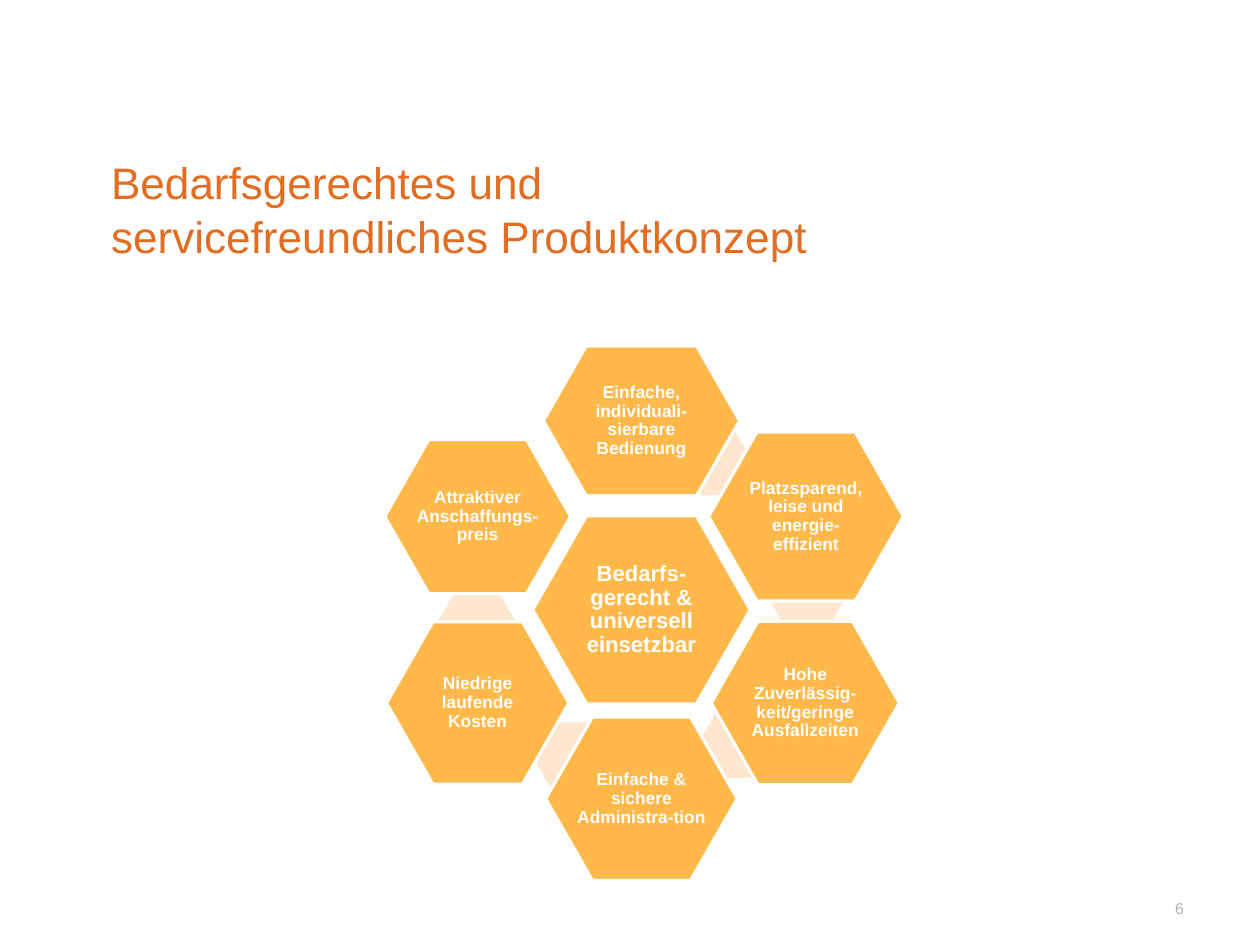
import pptx
import pptx.util
import pptx.dml.color
import pptx.enum.shapes
import pptx.enum.text

Pt = pptx.util.Pt
ALIGN = pptx.enum.text.PP_ALIGN
ANCHOR = pptx.enum.text.MSO_ANCHOR

COLORS = {"title": "E16D22", "number": "B2B2B2", "tile": "FFB84A",
          "link": "FFE6D0", "white": "FFFFFF"}

TITLE = "Bedarfsgerechtes und servicefreundliches Produktkonzept"
NUMBER = "6"
CENTER = (407.3, 387.2)
HUB = ("Bedarfs-gerecht & universell einsetzbar", (138.2, 119.5))
PETALS = [
    ("Einfache, individuali-sierbare Bedienung", (0, -120), (124.6, 95)),
    ("Platzsparend, leise und energie-effizient", (104.5, -59.2), (123.8, 107.3)),
    ("Hohe Zuverlässig-keit/geringe Ausfallzeiten", (104, 59.2), (119.5, 103.7)),
    ("Einfache & sichere Administra-tion", (0, 120), (121.7, 103.7)),
    ("Niedrige laufende Kosten", (-104, 59.2), (115.9, 103)),
    ("Attraktiver Anschaffungs-preis", (-104, -59.2), (118.1, 97.9)),
]
LINKS = [(424.8, 270), (486, 354.2), (443.5, 449.3), (338.4, 458.6), (276.5, 375.1)]
LINK_SIZE = (52.6, 44.6)

prs = pptx.Presentation()
prs.slide_width, prs.slide_height = Pt(800), Pt(600)
s = prs.slides.add_slide(prs.slide_layouts[6])


def rgb(name):
    return pptx.dml.color.RGBColor.from_string(COLORS[name])


def apply(obj, **values):
    for key, value in values.items():
        setattr(obj, key, value)


def write(sp, text, size, color, margins, anchor, align, spacing, bold=False):
    tf = sp.text_frame
    left, top, right, bottom = map(Pt, margins)
    apply(tf, word_wrap=True, vertical_anchor=anchor, margin_left=left,
          margin_top=top, margin_right=right, margin_bottom=bottom)
    p = tf.paragraphs[0]
    apply(p, alignment=align, line_spacing=spacing)
    r = p.add_run()
    r.text = text
    apply(r.font, name="Arial", size=Pt(size), bold=bold)
    r.font.color.rgb = rgb(color)


def hexagon(left, top, width, height, fill, adj):
    sp = s.shapes.add_shape(pptx.enum.shapes.MSO_SHAPE.HEXAGON,
                            Pt(left), Pt(top), Pt(width), Pt(height))
    sp.shadow.inherit = False
    sp.adjustments[0] = adj
    sp.fill.solid()
    sp.fill.fore_color.rgb = rgb(fill)
    sp.line.fill.background()
    return sp


def tile(text, offset, size, font_size):
    left, top = (c + d - n / 2 for c, d, n in zip(CENTER, offset, size))
    sp = hexagon(left, top, *size, "tile", 0.286)
    sp.line.color.rgb = rgb("white")
    sp.line.width = Pt(2)
    write(sp, text, font_size, "white", (0, 0, 0, 0), ANCHOR.MIDDLE,
          ALIGN.CENTER, 0.9, True)


title = s.shapes.add_textbox(Pt(62.6), Pt(98.6), Pt(535.7), Pt(68.4))
write(title, TITLE, 28, "title", (8, 0, 20, 0), ANCHOR.TOP, ALIGN.LEFT, Pt(34))

number = s.shapes.add_textbox(Pt(573.1), Pt(566.6), Pt(186.5), Pt(26))
write(number, NUMBER, 10, "number", (8, 4, 8, 4), ANCHOR.TOP, ALIGN.RIGHT, 1.0)

tile(HUB[0], (0, 0), HUB[1], 14)
for i, (text, offset, size) in enumerate(PETALS):
    for spot in LINKS[i:i + 1]:
        hexagon(*spot, *LINK_SIZE, "link", 0.289)
    tile(text, offset, size, 11)

prs.save("out.pptx")
